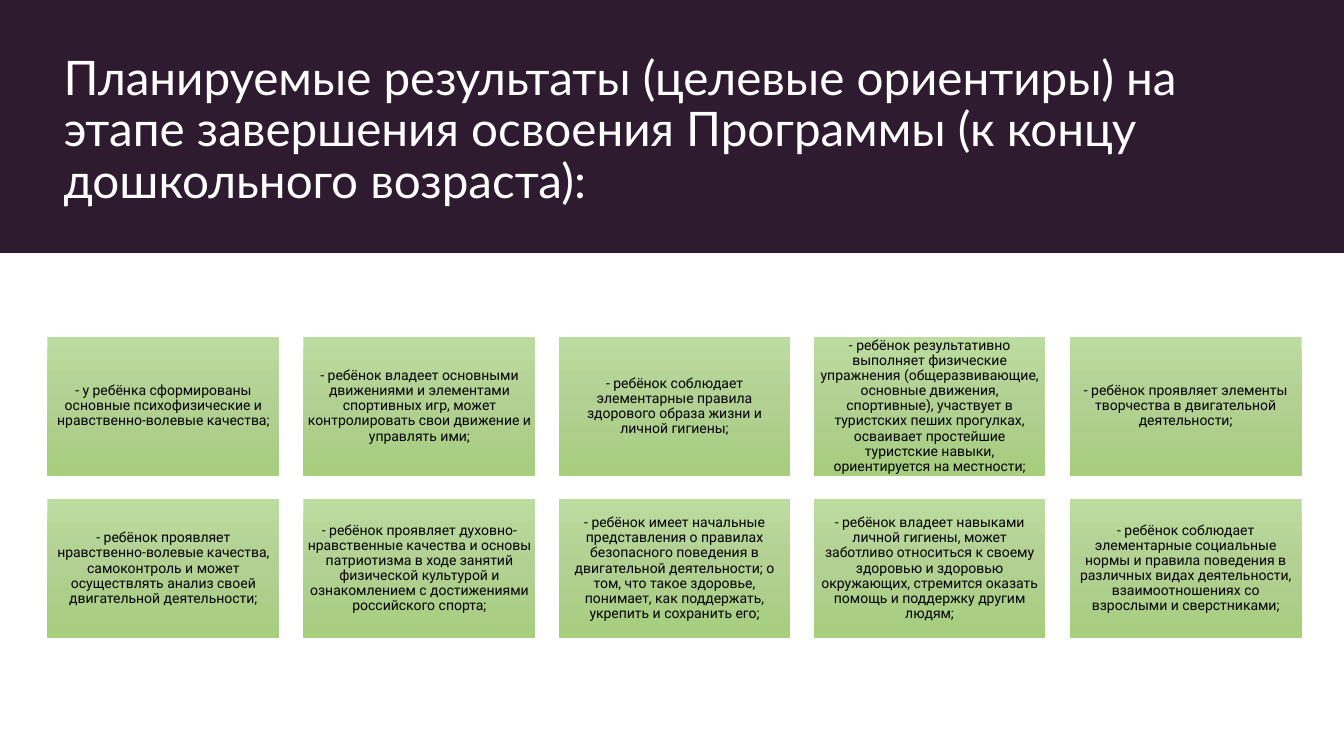
from copy import deepcopy

from pptx import Presentation
from pptx.dml.color import RGBColor
from pptx.enum.shapes import MSO_SHAPE
from pptx.enum.text import MSO_ANCHOR, MSO_AUTO_SIZE, PP_ALIGN
from pptx.oxml.ns import qn
from pptx.util import Emu, Pt

RECT = MSO_SHAPE.RECTANGLE
LEFT, CENTER = PP_ALIGN.LEFT, PP_ALIGN.CENTER
MIDDLE, BOTTOM = MSO_ANCHOR.MIDDLE, MSO_ANCHOR.BOTTOM
FIXED = MSO_AUTO_SIZE.NONE

PX = 9144
WIDTH, HEIGHT = 1333, 750
COLORS = {
    "band": "2F1B30",
    "title": "FFFFFF",
    "text": "000000",
    "top": "BCDB9E",
    "mid": "B1D092",
    "low": "A6CE7D",
}
TITLE = ("Планируемые результаты (целевые ориентиры) на этапе завершения "
         "освоения Программы (к концу дошкольного возраста):")
GOALS = [
    "- у ребёнка сформированы основные психофизические и "
    "нравственно-волевые качества;",
    "- ребёнок владеет основными движениями и элементами спортивных игр, "
    "может контролировать свои движение и управлять ими;",
    "- ребёнок соблюдает элементарные правила здорового образа жизни и "
    "личной гигиены;",
    "- ребёнок результативно выполняет физические упражнения "
    "(общеразвивающие, основные движения, спортивные), участвует в "
    "туристских пеших прогулках, осваивает простейшие туристские навыки, "
    "ориентируется на местности;",
    "- ребёнок проявляет элементы творчества в двигательной деятельности;",
    "- ребёнок проявляет нравственно-волевые качества, самоконтроль и может "
    "осуществлять анализ своей двигательной деятельности;",
    "- ребёнок проявляет духовно-нравственные качества и основы патриотизма "
    "в ходе занятий физической культурой и ознакомлением с достижениями "
    "российского спорта;",
    "- ребёнок имеет начальные представления о правилах безопасного "
    "поведения в двигательной деятельности; о том, что такое здоровье, "
    "понимает, как поддержать, укрепить и сохранить его;",
    "- ребёнок владеет навыками личной гигиены, может заботливо относиться "
    "к своему здоровью и здоровью окружающих, стремится оказать помощь и "
    "поддержку другим людям;",
    "- ребёнок соблюдает элементарные социальные нормы и правила поведения "
    "в различных видах деятельности, взаимоотношениях со взрослыми и "
    "сверстниками;",
]
COLS = 5


class Deck:
    """Draws styled elements on the current slide."""

    def __init__(self):
        self.show = Presentation()
        self.show.slide_width = Emu(WIDTH * PX)
        self.show.slide_height = Emu(HEIGHT * PX)
        self.slide = self.show.slides.add_slide(self.show.slide_layouts[5])

    def color(self, name):
        return RGBColor.from_string(COLORS[name])

    def label(self, shape, text, font, size, color, align, anchor):
        frame = shape.text_frame
        frame.text = text
        frame.word_wrap = True
        frame.auto_size = FIXED
        frame.vertical_anchor = anchor
        para = frame.paragraphs[0]
        para.alignment = align
        para.line_spacing = 0.9
        style = para.runs[0].font
        style.name = font
        style.size = Pt(size)
        style.color.rgb = self.color(color)

    def rect(self, *box):
        shape = self.slide.shapes.add_shape(RECT, *(Emu(n * PX) for n in box))
        shape.shadow.inherit = False
        shape.line.fill.background()
        return shape

    def band(self, *box):
        fill = self.rect(*box).fill
        fill.solid()
        fill.fore_color.rgb = self.color("band")

    def title(self, text, *box):
        shape = self.slide.shapes.title
        shape.left, shape.top, shape.width, shape.height = (
            Emu(n * PX) for n in box)
        self.slide.shapes._spTree.append(shape._element)
        self.label(shape, text, "Lato", 34, "title", LEFT, BOTTOM)

    def shade(self, shape):
        fill = shape.fill
        fill.gradient()
        fill.gradient_angle = 270
        stops = shape._element.spPr.find(qn("a:gradFill")).gsLst
        stops.insert(1, deepcopy(stops[0]))
        parts = zip(fill.gradient_stops, ("top", "mid", "low"), (0, 0.5, 1))
        for stop, name, place in parts:
            stop.color.rgb = self.color(name)
            stop.position = place

    def card(self, text, *box):
        shape = self.rect(*box)
        self.shade(shape)
        frame = shape.text_frame
        frame.margin_left = frame.margin_right = Emu(4 * PX)
        frame.margin_top = frame.margin_bottom = Emu(4 * PX)
        self.label(shape, text, "Roboto", 10, "text", CENTER, MIDDLE)


def main():
    deck = Deck()
    deck.band(0, 0, WIDTH, 251)
    deck.title(TITLE, 53, 40, 1189, 172)
    for i, goal in enumerate(GOALS):
        row, col = divmod(i, COLS)
        left = 47 + round(col * 1014 / (COLS - 1))
        deck.card(goal, left, 334 + row * 161, 230, 138)
    deck.show.save("out.pptx")


if __name__ == "__main__":
    main()
